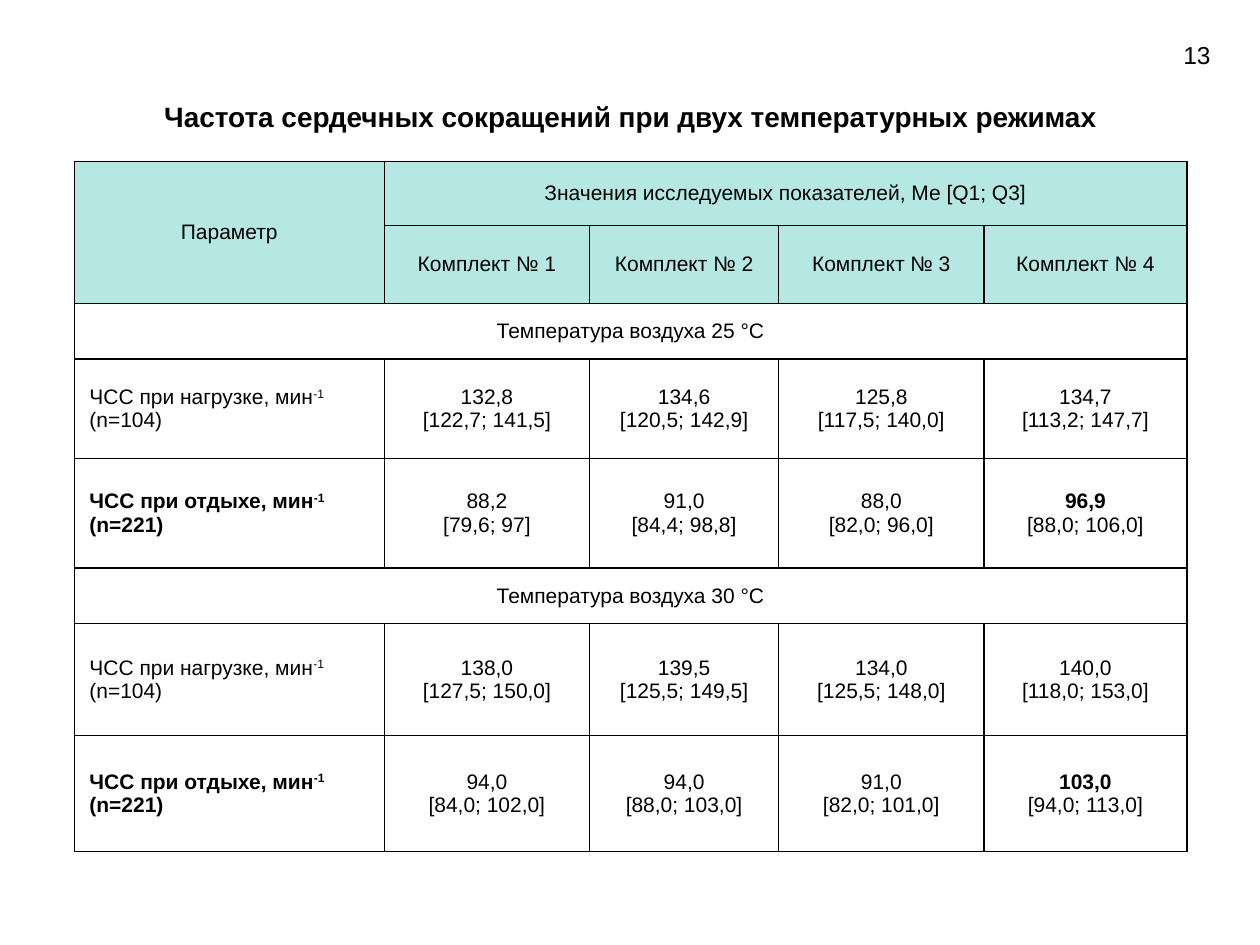
"""Build the slide with the heart rate table for two temperature conditions."""
import lxml.etree
import pptx
import pptx.dml.color
import pptx.enum.text
import pptx.oxml.ns
import pptx.util

Inches = pptx.util.Inches
ALIGN = pptx.enum.text.PP_ALIGN
MIDDLE = pptx.enum.text.MSO_ANCHOR.MIDDLE
COLORS = {"text": "000000", "border": "000000", "header": "B6E8E3", "body": "FFFFFF"}
FONT = "Arial"
COLUMN_WIDTHS = [2.46, 1.63, 1.5, 1.63, 1.61]
ROW_HEIGHTS = [0.51, 0.62, 0.44, 0.79, 0.87, 0.44, 0.89, 0.92]
HEADER_ROWS = 2
LOAD = "ЧСС при нагрузке, мин", "(n=104)"
REST = "ЧСС при отдыхе, мин", "(n=221)"
HEADINGS = {
    (0, 0): "Параметр",
    (0, 1): "Значения исследуемых показателей, Ме [Q1; Q3]",
    (2, 0): "Температура воздуха 25 °С",
    (5, 0): "Температура воздуха 30 °С",
    **{(1, number): f"Комплект № {number}" for number in range(1, 5)},
}
MERGES = [((0, 0), (1, 0)), ((0, 1), (0, 4)), ((2, 0), (2, 4)), ((5, 0), (5, 4))]
MEASUREMENTS = {
    3: (LOAD, ["132,8", "134,6", "125,8", "134,7"],
        ["122,7; 141,5", "120,5; 142,9", "117,5; 140,0", "113,2; 147,7"]),
    4: (REST, ["88,2", "91,0", "88,0", "96,9"],
        ["79,6; 97", "84,4; 98,8", "82,0; 96,0", "88,0; 106,0"]),
    6: (LOAD, ["138,0", "139,5", "134,0", "140,0"],
        ["127,5; 150,0", "125,5; 149,5", "125,5; 148,0", "118,0; 153,0"]),
    7: (REST, ["94,0", "94,0", "91,0", "103,0"],
        ["84,0; 102,0", "88,0; 103,0", "82,0; 101,0", "94,0; 113,0"]),
}


def rgb(name):
    return pptx.dml.color.RGBColor.from_string(COLORS[name])


def format_paragraph(para, size, bold=False, align=ALIGN.CENTER):
    para.alignment = align
    for span in para.runs:
        span.font.name = FONT
        span.font.size = pptx.util.Pt(size)
        span.font.bold = bold
        span.font.color.rgb = rgb("text")


def place_text(box, text, bounds, size, bold=False):
    box.left, box.top, box.width, box.height = map(Inches, bounds)
    frame = box.text_frame
    frame.text = text
    frame.word_wrap = True
    frame.auto_size = pptx.enum.text.MSO_AUTO_SIZE.NONE
    frame.vertical_anchor = MIDDLE
    format_paragraph(frame.paragraphs[0], size, bold)


def add_borders(cell):
    properties = cell._tc.get_or_add_tcPr()
    for side in ("lnL", "lnR", "lnT", "lnB"):
        line = lxml.etree.SubElement(properties, pptx.oxml.ns.qn(f"a:{side}"), w="12700")
        fill = lxml.etree.SubElement(line, pptx.oxml.ns.qn("a:solidFill"))
        lxml.etree.SubElement(fill, pptx.oxml.ns.qn("a:srgbClr"), val=COLORS["border"])


def style_cell(cell, color):
    add_borders(cell)
    cell.fill.solid()
    cell.fill.fore_color.rgb = rgb(color)
    cell.vertical_anchor = MIDDLE
    cell.margin_left = cell.margin_right = Inches(0.07)
    cell.margin_top = cell.margin_bottom = 0


def fill_label(cell, label):
    name, count = label
    cell.margin_left = Inches(0.12)
    cell.text = f"{name}\n{count}"
    power = cell.text_frame.paragraphs[0].add_run()
    power.text = "-1"
    for para in cell.text_frame.paragraphs:
        format_paragraph(para, 12, label == REST, ALIGN.LEFT)
    power.font._element.set("baseline", "30000")


def fill_value(cell, median, quartiles, bold):
    cell.text = f"{median}\n[{quartiles}]"
    first, second = cell.text_frame.paragraphs
    format_paragraph(first, 12, bold)
    format_paragraph(second, 12)


def add_rate_table(page):
    bounds = map(Inches, (0.59, 1.28, sum(COLUMN_WIDTHS), sum(ROW_HEIGHTS)))
    table = page.shapes.add_table(len(ROW_HEIGHTS), len(COLUMN_WIDTHS), *bounds).table
    table.first_row = table.horz_banding = False
    for column, width in zip(table.columns, COLUMN_WIDTHS):
        column.width = Inches(width)
    for index, (row, height) in enumerate(zip(table.rows, ROW_HEIGHTS)):
        row.height = Inches(height)
        for cell in row.cells:
            style_cell(cell, "header" if index < HEADER_ROWS else "body")
    for start, end in MERGES:
        table.cell(*start).merge(table.cell(*end))
    for position, text in HEADINGS.items():
        cell = table.cell(*position)
        cell.text = text
        format_paragraph(cell.text_frame.paragraphs[0], 12)
    for row, (label, medians, quartiles) in MEASUREMENTS.items():
        fill_label(table.cell(row, 0), label)
        for column, (median, spread) in enumerate(zip(medians, quartiles), 1):
            fill_value(table.cell(row, column), median, spread, label == REST and column == 4)


def main():
    deck = pptx.Presentation()
    deck.slide_width, deck.slide_height = Inches(10), Inches(7.5)
    page = deck.slides.add_slide(deck.slide_layouts[5])
    place_text(page.shapes.title, "Частота сердечных сокращений при двух температурных режимах",
               (0.51, 0.74, 8.99, 0.37), 16, True)
    place_text(page.shapes.add_textbox(0, 0, 0, 0), "13", (9.26, 0.28, 0.48, 0.31), 14)
    add_rate_table(page)
    deck.save("out.pptx")


if __name__ == "__main__":
    main()
